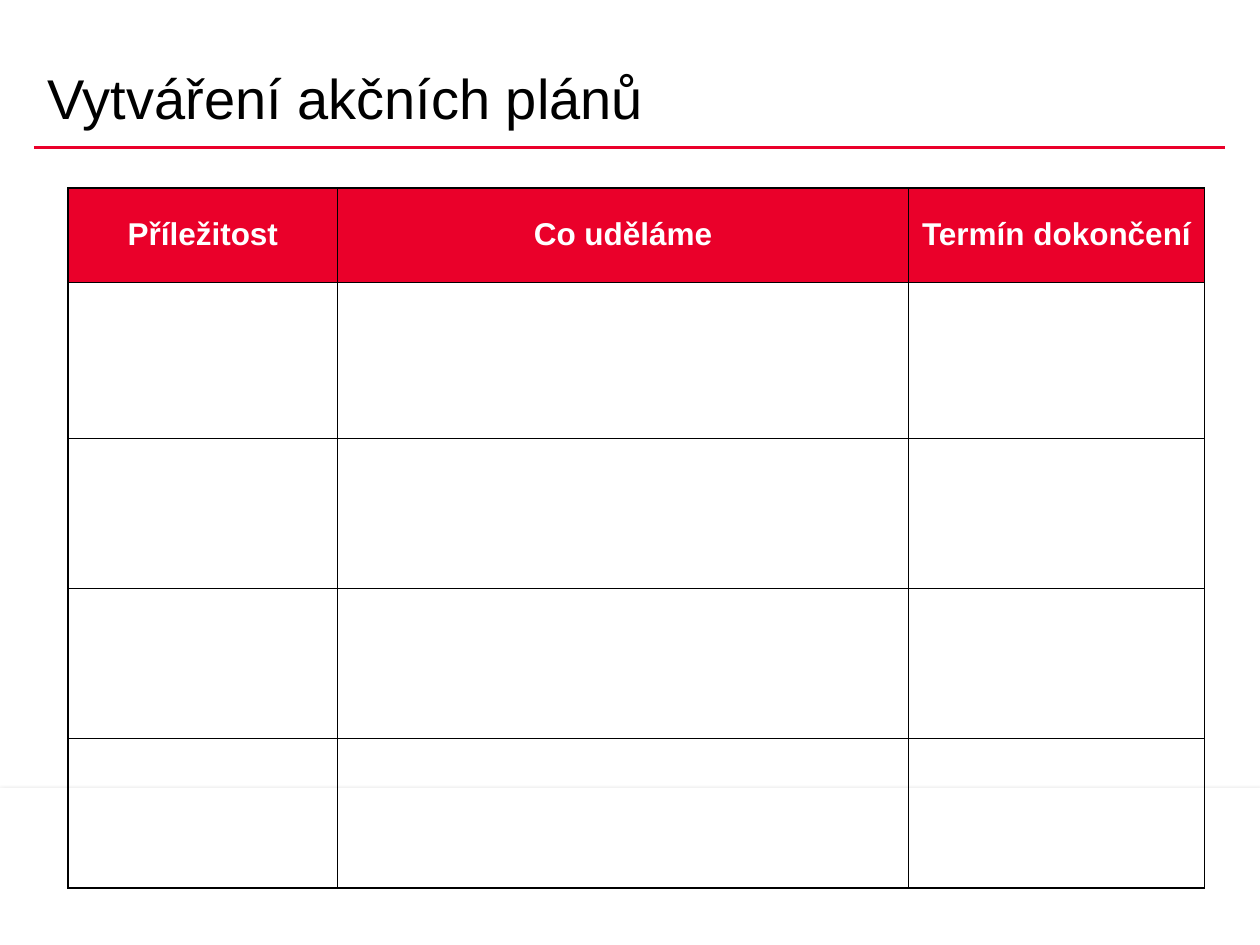
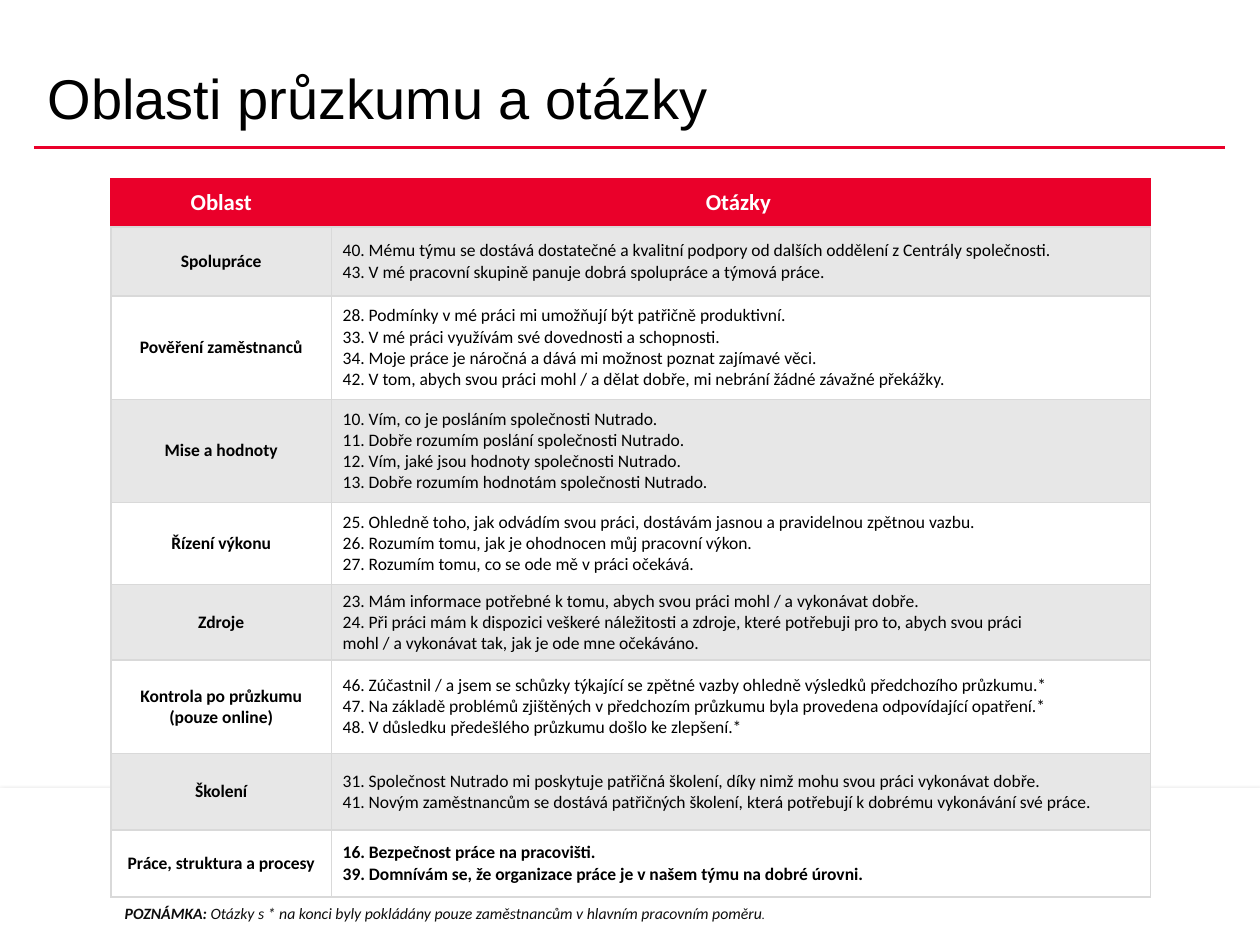
from lxml.etree import SubElement
from pptx import Presentation
from pptx.dml.color import RGBColor
from pptx.enum.shapes import MSO_CONNECTOR, MSO_SHAPE
from pptx.enum.text import MSO_ANCHOR, PP_ALIGN
from pptx.oxml.ns import qn
from pptx.util import Inches, Pt

RED = RGBColor(0xEA, 0x00, 0x2A)
WHITE = RGBColor(0xFF, 0xFF, 0xFF)
BLACK = RGBColor(0x00, 0x00, 0x00)
INK = RGBColor(0x0D, 0x0D, 0x0D)
GREY = RGBColor(0xD9, 0xD9, 0xD9)
BAND = RGBColor(0xE7, 0xE7, 0xE7)

PLAN_HEADS = ["Příležitost", "Co uděláme", "Termín dokončení"]
PLAN_COLS = [2.14, 4.53, 2.35]
PLAN_ROWS = [0.75, 1.24, 1.19, 1.19, 1.19]

AREA_HEADS = ["Oblast", "Otázky "]
AREA_COLS = [1.75, 6.5]
AREA_HEAD_HEIGHT = 0.38

# Area, row height, questions
AREAS = [
    ("Spolupráce", 0.55, [
        "40. Mému týmu se dostává dostatečné a kvalitní podpory od dalších oddělení z Centrály společnosti.",
        "43. V mé pracovní skupině panuje dobrá spolupráce a týmová práce."]),
    ("Pověření zaměstnanců", 0.82, [
        "28. Podmínky v mé práci mi umožňují být patřičně produktivní.",
        "33. V mé práci využívám své dovednosti a schopnosti.",
        "34. Moje práce je náročná a dává mi možnost poznat zajímavé věci.",
        "42. V tom, abych svou práci mohl / a dělat dobře, mi nebrání žádné závažné překážky."]),
    ("Mise a hodnoty", 0.82, [
        "10. Vím, co je posláním společnosti Nutrado.",
        "11. Dobře rozumím poslání společnosti Nutrado.",
        "12. Vím, jaké jsou hodnoty společnosti Nutrado.",
        "13. Dobře rozumím hodnotám společnosti Nutrado."]),
    ("Řízení výkonu", 0.65, [
        "25. Ohledně toho, jak odvádím svou práci, dostávám jasnou a pravidelnou zpětnou vazbu.",
        "26. Rozumím tomu, jak je ohodnocen můj pracovní výkon.",
        "27. Rozumím tomu, co se ode mě v práci očekává."]),
    ("Zdroje", 0.6, [
        "23. Mám informace potřebné k tomu, abych svou práci mohl / a vykonávat dobře.",
        "24. Při práci mám k dispozici veškeré náležitosti a zdroje, které potřebuji pro to, abych svou práci \v"
        "mohl / a vykonávat tak, jak je ode mne očekáváno."]),
    ("Kontrola po průzkumu (pouze online)", 0.74, [
        "46. Zúčastnil / a jsem se schůzky týkající se zpětné vazby ohledně výsledků předchozího průzkumu.*",
        "47. Na základě problémů zjištěných v předchozím průzkumu byla provedena odpovídající opatření.*",
        "48. V důsledku předešlého průzkumu došlo ke zlepšení.*"]),
    ("Školení", 0.61, [
        "31. Společnost Nutrado mi poskytuje patřičná školení, díky nimž mohu svou práci vykonávat dobře.",
        "41. Novým zaměstnancům se dostává patřičných školení, která potřebují k dobrému vykonávání své práce."]),
    ("Práce, struktura a procesy", 0.53, [
        "16. Bezpečnost práce na pracovišti.",
        "39. Domnívám se, že organizace práce je v našem týmu na dobré úrovni."]),
]

NOTE = [
    ("POZNÁMKA: ", 9, True, True),
    ("Otázky s * na konci byly pokládány pouze zaměstnancům v hlavním pracovním poměru", 9, False, True),
    (".", 7, False, False),
]


def style(run, font, size, color, bold=False, italic=False):
    run.font.name = font
    run.font.size = Pt(size)
    run.font.color.rgb = color
    run.font.bold = bold
    run.font.italic = italic


def border(cell, colors):
    """Set 1 pt borders; colors follow the order left, right, top, bottom."""
    props = cell._tc.get_or_add_tcPr()
    for side, color in zip("LRTB", colors):
        line = SubElement(props, qn(f"a:ln{side}"), w=str(Pt(1)))
        fill = SubElement(line, qn("a:solidFill"))
        SubElement(fill, qn("a:srgbClr"), val=str(color))


class Deck:
    """Presentation with its shared style and the current slide."""

    def __init__(self):
        self.prs = Presentation()
        self.prs.slide_width = Inches(10)
        self.prs.slide_height = Inches(7.5)

    def page(self, title):
        self.shapes = self.prs.slides.add_slide(self.prs.slide_layouts[6]).shapes
        self.footer()
        self.rule()
        self.title(title)

    def footer(self):
        band = self.shapes.add_shape(
            MSO_SHAPE.RECTANGLE, 0, Inches(6.26), Inches(10), Inches(1.24))
        band.fill.solid()
        band.fill.fore_color.rgb = WHITE
        band.line.color.rgb = WHITE
        band.line.width = Pt(0.75)
        band.shadow.inherit = False
        effects = band._element.spPr.find(qn("a:effectLst"))
        shadow = SubElement(effects, qn("a:outerShdw"), blurRad="40000", dist="23000",
                            dir="5400000", rotWithShape="0")
        tint = SubElement(shadow, qn("a:srgbClr"), val=str(BLACK))
        SubElement(tint, qn("a:alpha"), val="35000")

    def rule(self):
        line = self.shapes.add_connector(
            MSO_CONNECTOR.STRAIGHT, Inches(0.27), Inches(1.17), Inches(9.72), Inches(1.17))
        line.line.color.rgb = RED
        line.line.width = Pt(2)
        SubElement(line._element.spPr, qn("a:effectLst"))

    def box(self, left, top, width, height):
        frame = self.shapes.add_textbox(
            Inches(left), Inches(top), Inches(width), Inches(height)).text_frame
        frame.word_wrap = True
        return frame

    def title(self, text):
        frame = self.box(0.28, 0.05, 9, 1.03)
        frame.vertical_anchor = MSO_ANCHOR.BOTTOM
        frame.text = text
        frame.paragraphs[0].line_spacing = 0.8
        style(frame.paragraphs[0].runs[0], "Arial", 32, BLACK)

    def note(self, parts):
        frame = self.box(0.88, 7.11, 7.3, 0.32)
        frame.margin_left = frame.margin_right = Inches(0.11)
        frame.margin_top = frame.margin_bottom = Inches(0.06)
        for text, size, bold, italic in parts:
            run = frame.paragraphs[0].add_run()
            run.text = text
            style(run, "Calibri", size, INK, bold, italic)

    def table(self, left, top, cols, rows):
        """Add a table without banding, sized by its column widths and row heights."""
        grid = self.shapes.add_table(
            len(rows), len(cols), Inches(left), Inches(top),
            Inches(sum(cols)), Inches(sum(rows))).table
        grid.first_row = grid.horz_banding = False
        for column, width in zip(grid.columns, cols):
            column.width = Inches(width)
        for row, height in zip(grid.rows, rows):
            row.height = Inches(height)
        return grid

    def cell(self, cell, colors, fill=None):
        border(cell, colors)
        if fill is None:
            cell.fill.background()
        else:
            cell.fill.solid()
            cell.fill.fore_color.rgb = fill

    def words(self, cell, text, font, size, color, bold=True, align=PP_ALIGN.CENTER):
        cell.vertical_anchor = MSO_ANCHOR.MIDDLE
        cell.text_frame.text = text
        for para in cell.text_frame.paragraphs:
            para.alignment = align
            for run in para.runs:
                style(run, font, size, color, bold)

    def plans(self):
        self.page("Vytváření akčních plánů")
        grid = self.table(0.54, 1.49, PLAN_COLS, PLAN_ROWS)
        for cell in grid.iter_cells():
            self.cell(cell, [BLACK] * 4)
        for cell, head in zip(grid.rows[0].cells, PLAN_HEADS):
            cell.fill.solid()
            cell.fill.fore_color.rgb = RED
            self.words(cell, head, "Arial", 18, WHITE)

    def areas(self):
        self.page("Oblasti průzkumu a otázky")
        self.note(NOTE)
        heights = [AREA_HEAD_HEIGHT] + [height for _, height, _ in AREAS]
        grid = self.table(0.88, 1.42, AREA_COLS, heights)
        for cell in grid.iter_cells():
            cell.margin_left = cell.margin_right = Inches(0.09)
            cell.margin_top = cell.margin_bottom = Inches(0.04)
        for cell, head in zip(grid.rows[0].cells, AREA_HEADS):
            self.cell(cell, [RED, RED, RED, GREY], RED)
            self.words(cell, head, "Calibri", 13, WHITE)
        for index, (area, _, asks) in enumerate(AREAS):
            name, body = grid.rows[index + 1].cells
            for cell in (name, body):
                self.cell(cell, [GREY] * 4, WHITE if index % 2 else BAND)
            last = index == len(AREAS) - 1
            self.words(name, area, "Calibri", 10, BLACK)
            self.words(body, "\n".join(asks), "Calibri", 10, BLACK, last, PP_ALIGN.LEFT)


def main():
    deck = Deck()
    deck.plans()
    deck.areas()
    deck.prs.save("out.pptx")


if __name__ == "__main__":
    main()
